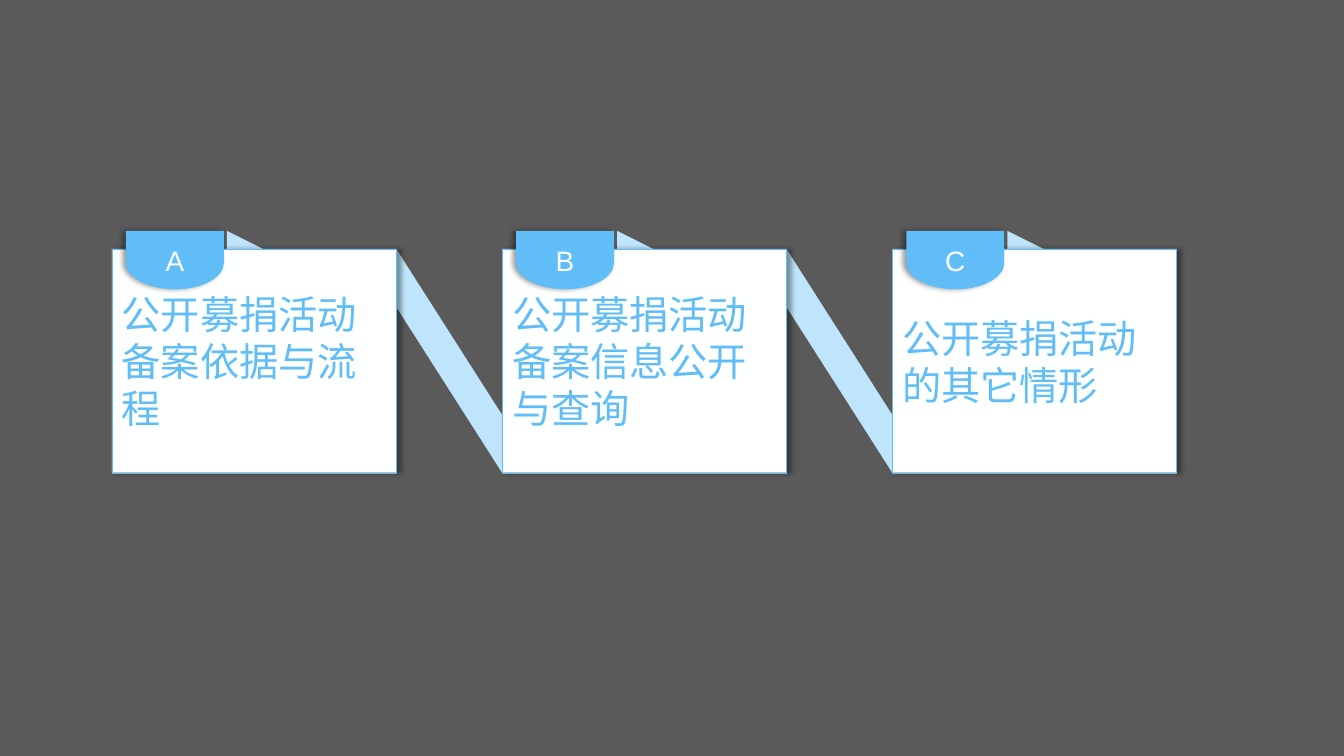
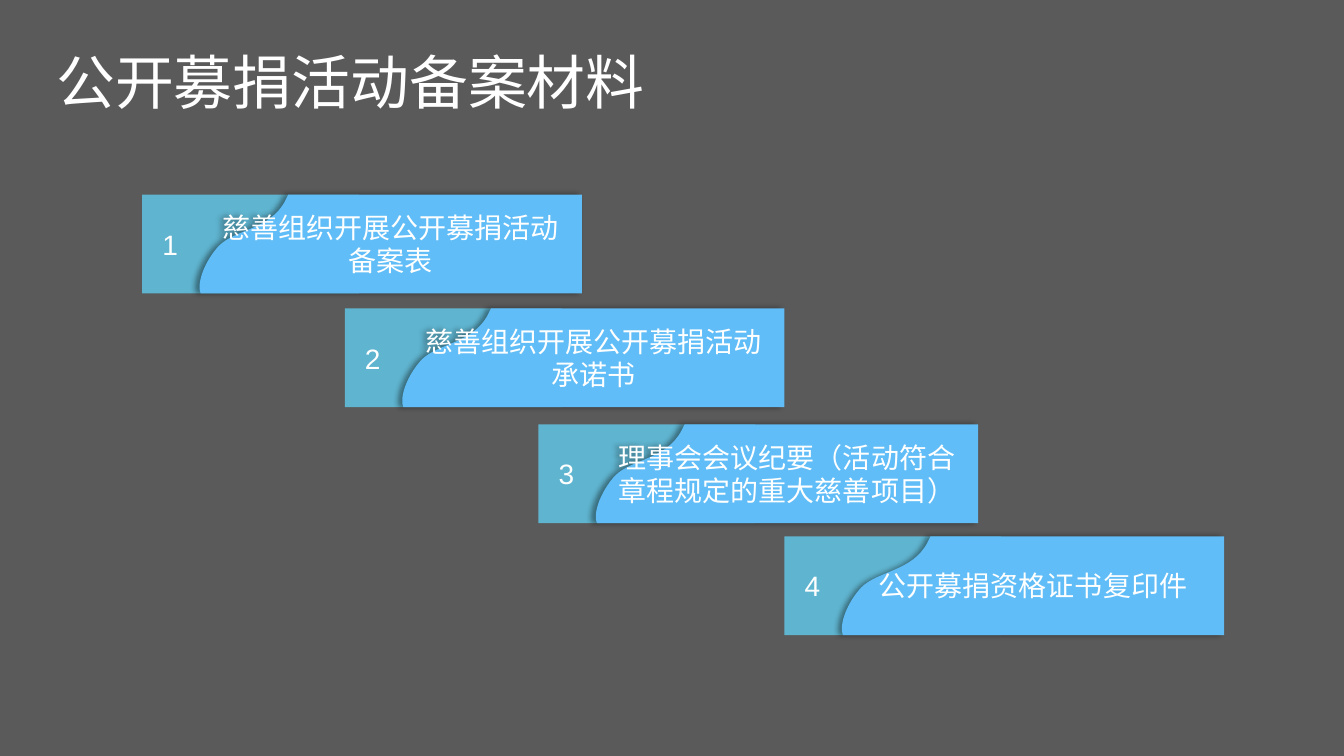
from dataclasses import dataclass

from lxml import etree
from pptx import Presentation
from pptx.dml.color import RGBColor
from pptx.enum import shapes, text
from pptx.oxml import ns
from pptx.util import Inches, Pt

CARDS = [
    ("A", "公开募捐活动备案依据与流程"),
    ("B", "公开募捐活动备案信息公开与查询"),
    ("C", "公开募捐活动的其它情形"),
]
TITLE = "公开募捐活动备案材料"
MATERIALS = [
    (1.41, 1.93, "慈善组织开展公开募捐活动备案表"),
    (3.42, 3.06, "慈善组织开展公开募捐活动承诺书"),
    (5.34, 4.21, "理事会会议纪要（活动符合章程规定的重大慈善项目）"),
    (7.78, 5.32, "公开募捐资格证书复印件"),
]

CARD_LEFT, CARD_TOP, CARD_W, CARD_H, CARD_PITCH = 1.11, 2.47, 2.82, 2.22, 3.87
TAB_TOP, TAB_W, TAB_H = 2.29, 0.97, 0.58
BAR_H, NUMBER_W, BANNER_OFFSET = 0.98, 2.15, 0.57

TAB_OUTLINE = [
    (0, 0), (TAB_W, 0), (TAB_W, 0.32),
    (TAB_W, 0.46, 0.76, TAB_H, 0.49, TAB_H),
    (0.22, TAB_H, 0, 0.46, 0, 0.32),
]
BANNER_OUTLINE = [
    (0.88, 0), (3.79, 0), (3.79, BAR_H), (0.01, BAR_H), (0, 0.94),
    (-0.01, 0.81, 0.08, 0.63, 0.19, 0.51),
    (0.36, 0.34, 0.7, 0.35, 0.85, 0.06),
]


@dataclass(frozen=True)
class Theme:
    font: str = "Arial"
    background: str = "5A5A5A"
    paper: str = "FEFFFF"
    white: str = "FFFFFF"
    blue: str = "60BDF7"
    pale: str = "BFE5FC"
    teal: str = "5FB4CF"
    title: int = 42
    card: int = 28
    label: int = 20


T = Theme()


def rgb(value):
    return RGBColor.from_string(value)


def style(sp, fill, line=None):
    sp.shadow.inherit = False
    sp.fill.solid()
    sp.fill.fore_color.rgb = rgb(fill)
    if line:
        sp.line.color.rgb = rgb(line)
        sp.line.width = Pt(0.25)
    else:
        sp.line.fill.background()
    return sp


def add_box(parent, kind, box, fill, line=None):
    return style(parent.add_shape(kind, *map(Inches, box)), fill, line)


def add_shadow(sp, distance, degrees):
    effects = sp._element.spPr.find(ns.qn("a:effectLst"))
    shadow = etree.SubElement(
        effects, ns.qn("a:outerShdw"), blurRad=str(Pt(4)), dist=str(Pt(distance)),
        dir=str(degrees * 60000), algn="ctr", rotWithShape="0")
    color = etree.SubElement(shadow, ns.qn("a:srgbClr"), val="000000")
    etree.SubElement(color, ns.qn("a:alpha"), val="40000")


def add_outline(parent, outline, left, top, fill):
    ends = [(Inches(part[-2]), Inches(part[-1])) for part in outline]
    builder = parent.build_freeform(*ends[0])
    builder.add_line_segments(ends[1:], close=True)
    sp = builder.convert_to_shape(Inches(left), Inches(top))
    segments = list(sp._element.iter(ns.qn("a:lnTo")))
    for segment, part in zip(segments, outline[1:]):
        if len(part) == 6:
            segment.tag = ns.qn("a:cubicBezTo")
            for i, (x, y) in enumerate((part[:2], part[2:4])):
                point = etree.Element(ns.qn("a:pt"), x=str(Inches(x)), y=str(Inches(y)))
                segment.insert(i, point)
    return style(sp, fill)


def write(sp, words, size, color, align=text.PP_ALIGN.LEFT):
    tf = sp.text_frame
    tf.word_wrap = True
    tf.vertical_anchor = text.MSO_ANCHOR.MIDDLE
    p = tf.paragraphs[0]
    p.text = words
    p.alignment = align
    p.font.name = T.font
    p.font.size = Pt(size)
    p.font.color.rgb = rgb(color)
    return p


def add_ribbon(s, left):
    width = CARD_PITCH - CARD_W
    sp = add_box(
        s.shapes, shapes.MSO_SHAPE.PARALLELOGRAM,
        (left + (width - CARD_H) / 2, CARD_TOP + (CARD_H - width) / 2, CARD_H, width),
        T.pale)
    sp.rotation = 270
    sp.adjustments[0] = 1.567


def add_card(s, left, letter, words):
    group = s.shapes.add_group_shape().shapes
    add_box(group, shapes.MSO_SHAPE.RIGHT_TRIANGLE, (left + 1.14, TAB_TOP, 0.38, 0.19), T.pale)
    card = add_box(group, shapes.MSO_SHAPE.RECTANGLE,
                   (left, CARD_TOP, CARD_W, CARD_H), T.paper, T.blue)
    add_shadow(card, 3, 0)
    write(card, words, T.card, T.blue)
    tab = add_outline(group, TAB_OUTLINE, left + 0.14, TAB_TOP, T.blue)
    add_shadow(tab, 2, 180)
    write(tab, letter, T.label, T.paper, text.PP_ALIGN.CENTER)


def add_material(s, number, left, top, words):
    group = s.shapes.add_group_shape().shapes
    box = add_box(group, shapes.MSO_SHAPE.RECTANGLE, (left, top, NUMBER_W, BAR_H), T.teal)
    box.text_frame.margin_left = Inches(0.2)
    write(box, str(number), T.label, T.paper)
    banner = add_outline(group, BANNER_OUTLINE, left + BANNER_OFFSET, top, T.blue)
    add_shadow(banner, 3, 180)
    write(banner, words, T.label, T.white, text.PP_ALIGN.CENTER)


def add_title(s, words):
    sp = s.shapes.add_textbox(*map(Inches, (0.46, 0.48, 6.82, 0.74)))
    write(sp, words, T.title, T.white).line_spacing = 0.9


def main():
    prs = Presentation()
    prs.slide_width, prs.slide_height = Inches(13.33), Inches(7.5)
    background = prs.slide_master.background.fill
    background.solid()
    background.fore_color.rgb = rgb(T.background)
    blank = prs.slide_layouts[6]

    s = prs.slides.add_slide(blank)
    for i, (letter, words) in enumerate(CARDS):
        left = CARD_LEFT + i * CARD_PITCH
        if i < len(CARDS) - 1:
            add_ribbon(s, left + CARD_W)
        add_card(s, left, letter, words)

    s = prs.slides.add_slide(blank)
    add_title(s, TITLE)
    for number, (left, top, words) in enumerate(MATERIALS, 1):
        add_material(s, number, left, top, words)

    prs.save("out.pptx")


if __name__ == "__main__":
    main()
